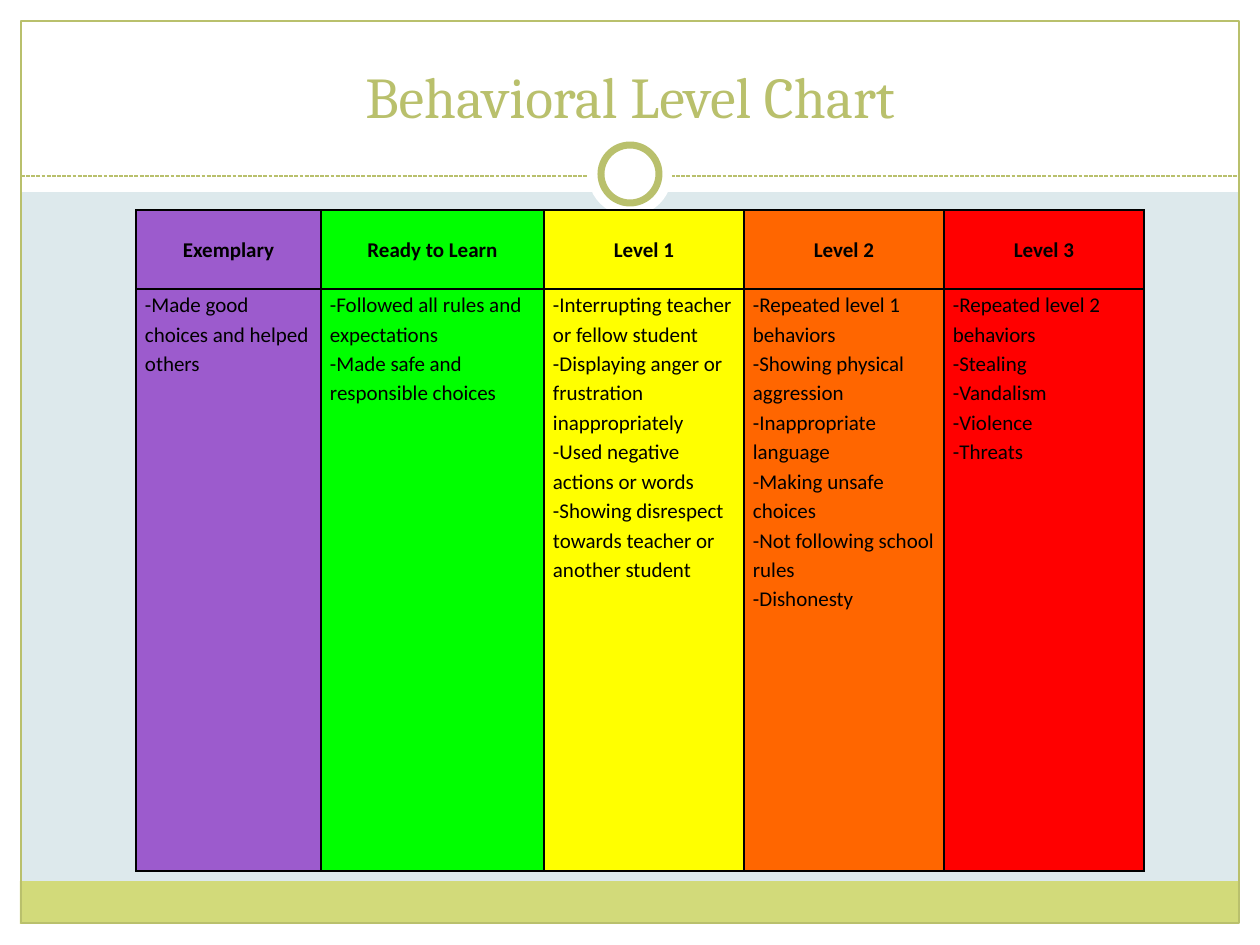
"""Build the behavioral level chart slide."""
import dataclasses
import typing

import lxml.etree
import pptx
import pptx.dml.color
import pptx.enum.dml
import pptx.enum.shapes
import pptx.enum.text
import pptx.oxml.ns
import pptx.util

SCALE = 914400 / 126
HUES = {
    "sky": "DDE9EC", "white": "FFFFFF", "lime": "D2DA7A", "olive": "B9C06C",
    "black": "000000", "purple": "9C5BCD", "green": "00FF00",
    "yellow": "FFFF00", "orange": "FF6600", "red": "FF0000",
}
KIND = pptx.enum.shapes.MSO_SHAPE
ALIGN = pptx.enum.text.PP_ALIGN


@dataclasses.dataclass
class Part:
    box: tuple[int, int, int, int]
    fill: str | None = None
    line: str | None = None
    width: float = 0.75
    kind: KIND = KIND.RECTANGLE


@dataclasses.dataclass
class Level:
    name: str
    hue: str
    width: int
    rules: list[str]


PARTS = [
    Part((0, 924, 1260, 21), "white"),
    Part((0, 0, 1260, 192), "white"),
    Part((0, 0, 21, 945), "white"),
    Part((1239, 0, 21, 945), "white"),
    Part((20, 881, 1218, 43), "lime"),
    Part((21, 21, 1218, 902), line="olive"),
]
RINGS = [
    Part((588, 132, 84, 84), "white", kind=KIND.OVAL),
    Part((601, 145, 58, 58), "white", "olive", 4, KIND.OVAL),
]
LEVELS = [
    Level("Exemplary", "purple", 185, ["-Made good choices and helped others"]),
    Level("Ready to Learn", "green", 223, [
        "-Followed all rules and expectations",
        "-Made safe and responsible choices"]),
    Level("Level 1", "yellow", 200, [
        "-Interrupting teacher or fellow student",
        "-Displaying anger or frustration inappropriately",
        "-Used negative actions or words",
        "-Showing disrespect towards teacher or another student"]),
    Level("Level 2", "orange", 200, [
        "-Repeated level 1 behaviors", "-Showing physical aggression",
        "-Inappropriate language", "-Making unsafe choices",
        "-Not following school rules", "-Dishonesty"]),
    Level("Level 3", "red", 200, [
        "-Repeated level 2 behaviors", "-Stealing", "-Vandalism",
        "-Violence", "-Threats"]),
]
ROWS = [79, 582]


def px(num: int) -> pptx.util.Emu:
    """Turn pixels into EMU."""
    return pptx.util.Emu(round(num * SCALE))


def paint(fill: typing.Any, hue: str) -> None:
    """Set a solid fill."""
    fill.solid()
    fill.fore_color.rgb = pptx.dml.color.RGBColor.from_string(HUES[hue])


def draw(slide: typing.Any, part: Part) -> None:
    """Draw one plain shape."""
    shape = slide.shapes.add_shape(part.kind, *map(px, part.box))
    shape.shadow.inherit = False
    if part.fill:
        paint(shape.fill, part.fill)
    else:
        shape.fill.background()
    if part.line:
        paint(shape.line.fill, part.line)
        shape.line.width = pptx.util.Pt(part.width)
    else:
        shape.line.fill.background()


def rule(slide: typing.Any) -> None:
    """Draw the dashed line under the title."""
    line = slide.shapes.add_connector(
        pptx.enum.shapes.MSO_CONNECTOR.STRAIGHT, px(21), px(176), px(1239), px(176))
    paint(line.line.fill, "olive")
    line.line.width = pptx.util.Pt(0.75)
    line.line.dash_style = pptx.enum.dml.MSO_LINE.SQUARE_DOT
    props = line.element.find(pptx.oxml.ns.qn("p:spPr"))
    lxml.etree.SubElement(props, pptx.oxml.ns.qn("a:effectLst"))


def write(para: typing.Any, text: str, face: str, size: int, hue: str,
          bold: bool = False) -> None:
    """Add one styled run."""
    run = para.add_run()
    run.text = text
    run.font.name = face
    run.font.size = pptx.util.Pt(size)
    run.font.bold = bold
    paint(run.font.fill, hue)


def head(slide: typing.Any) -> None:
    """Place the title in front of the bands."""
    title = slide.shapes.title
    title.left, title.top, title.width, title.height = map(px, (42, 32, 1176, 104))
    title.element.getparent().append(title.element)
    frame = title.text_frame
    frame.auto_size = pptx.enum.text.MSO_AUTO_SIZE.NONE
    frame.vertical_anchor = pptx.enum.text.MSO_ANCHOR.BOTTOM
    para = frame.paragraphs[0]
    para.alignment = ALIGN.CENTER
    write(para, "Behavioral Level Chart", "Cambria", 33, "olive")


def edge(cell: typing.Any) -> None:
    """Put a black border on all four sides."""
    props = cell._tc.get_or_add_tcPr()
    for spot, side in enumerate(("lnL", "lnR", "lnT", "lnB")):
        line = lxml.etree.Element(
            pptx.oxml.ns.qn(f"a:{side}"), w=str(pptx.util.Pt(1)))
        fill = lxml.etree.SubElement(line, pptx.oxml.ns.qn("a:solidFill"))
        lxml.etree.SubElement(
            fill, pptx.oxml.ns.qn("a:srgbClr"), val=HUES["black"])
        props.insert(spot, line)


def fill_in(cell: typing.Any, hue: str, lines: list[str], top: bool) -> None:
    """Fill one table cell."""
    paint(cell.fill, hue)
    edge(cell)
    cell.margin_left = cell.margin_right = px(9)
    cell.margin_top = px(24 if top else 0)
    cell.margin_bottom = 0
    frame = cell.text_frame
    for spot, text in enumerate(lines):
        para = frame.add_paragraph() if spot else frame.paragraphs[0]
        para.alignment = ALIGN.CENTER if top else ALIGN.LEFT
        para.line_spacing = 1.15
        write(para, text, "Calibri", 12, "black", top)


def chart(slide: typing.Any) -> None:
    """Build the table of levels."""
    wide = sum(level.width for level in LEVELS)
    table = slide.shapes.add_table(
        len(ROWS), len(LEVELS), px(136), px(210), px(wide), px(sum(ROWS))).table
    table.first_row = table.horz_banding = False
    for row, high in zip(table.rows, ROWS):
        row.height = px(high)
    for col, level in enumerate(LEVELS):
        table.columns[col].width = px(level.width)
        fill_in(table.cell(0, col), level.hue, [level.name], True)
        fill_in(table.cell(1, col), level.hue, level.rules, False)


def main() -> None:
    """Build and save the deck."""
    deck = pptx.Presentation()
    deck.slide_width, deck.slide_height = px(1260), px(945)
    slide = deck.slides.add_slide(deck.slide_layouts[5])
    paint(slide.background.fill, "sky")
    for part in PARTS:
        draw(slide, part)
    rule(slide)
    for ring in RINGS:
        draw(slide, ring)
    head(slide)
    chart(slide)
    deck.save("out.pptx")


if __name__ == "__main__":
    main()
